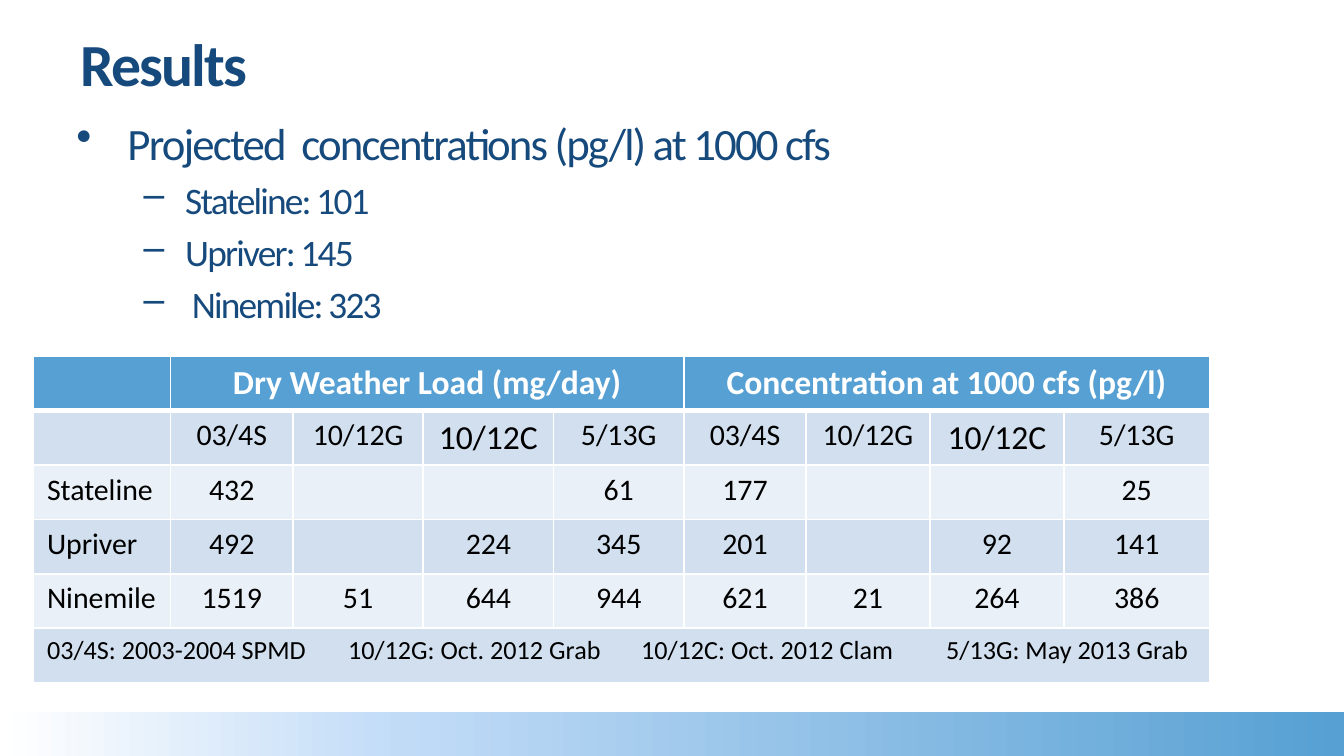
"""Build the Results slide with projected concentrations and a load table."""
from copy import deepcopy
from pptx import Presentation
from pptx.dml.color import RGBColor as Rgb
from pptx.enum.shapes import MSO_SHAPE as Shape
from pptx.enum.text import PP_ALIGN as Align
from pptx.oxml.ns import qn
from pptx.oxml.xmlchemy import OxmlElement as Elem
from pptx.util import Inches, Pt

FONT = "Calibri"
HUES = {
    "white": "FFFFFF", "pale": "C1DBF7", "blue": "56A0D3", "navy": "174A7C",
    "black": "000000", "even": "E9F0F7", "odd": "D1DFEF",
}
TITLE = "Results"
POINTS = [
    (0, "Projected  concentrations (pg/l) at 1000 cfs"),
    (1, "Stateline: 101"),
    (1, "Upriver: 145"),
    (1, " Ninemile: 323"),
]
LEVELS = [("•", 0.38, 0.38, 24), ("–", 0.81, 0.31, 20)]
GROUPS = ["Dry Weather Load (mg/day)", "Concentration at 1000 cfs (pg/l)"]
DATES = ["03/4S", "10/12G", "10/12C", "5/13G"]
SITES = [
    ["Stateline", "432", "", "", "61", "177", "", "", "25"],
    ["Upriver", "492", "", "224", "345", "201", "", "92", "141"],
    ["Ninemile", "1519", "51", "644", "944", "621", "21", "264", "386"],
]
KEYS = ["03/4S: 2003-2004 SPMD", "10/12G: Oct. 2012 Grab",
        "10/12C: Oct. 2012 Clam", "5/13G: May 2013 Grab"]
TABS = [2.24, 4.42, 6.69]
WIDTHS = [1.02, 0.91, 0.97, 0.97, 0.97, 0.91, 0.92, 1, 1.08]
WIDE = 10
HIGH = WIDE * 9 / 16
DEPTH = 2.43


def tint(name):
    return Rgb.from_string(HUES[name])


def style(para, size, hue, bold=False, space=None):
    for run in para.runs:
        font = run.font
        font.name, font.size, font.bold = FONT, Pt(size), bold
        font.color.rgb = tint(hue)
        if space is not None:
            run._r.get_or_add_rPr().set("spc", str(space * 100))


def add_bar(slide):
    bar = slide.shapes.add_shape(
        Shape.RECTANGLE, 0, Inches(5.3), Inches(WIDE), Inches(0.35))
    bar.shadow.inherit = False
    bar.line.fill.background()
    bar.fill.gradient()
    bar.fill.gradient_angle = 0
    stops = next(bar._element.iter(qn("a:gsLst")))
    stops.insert(1, deepcopy(stops[0]))
    marks = [(0, "white"), (0.3, "pale"), (1, "blue")]
    for stop, (place, hue) in zip(bar.fill.gradient_stops, marks):
        stop.position = place
        stop.color.rgb = tint(hue)


def add_text(slide, *place):
    box = slide.shapes.add_textbox(*map(Inches, place))
    box.text_frame.word_wrap = True
    return box.text_frame


def add_points(slide):
    frame = add_text(slide, 0.47, 0.81, 8.92, 1.75)
    for i, (level, text) in enumerate(POINTS):
        para = frame.add_paragraph() if i else frame.paragraphs[0]
        mark, left, hang, size = LEVELS[level]
        para.text, para.level = text, level
        if i:
            para.space_before = Pt(size * 0.2)
        props = para._p.get_or_add_pPr()
        props.set("marL", str(Inches(left)))
        props.set("indent", str(-Inches(hang)))
        bullet = Elem("a:buChar")
        bullet.set("char", mark)
        props.append(bullet)
        style(para, size, "navy", space=-1)
        end = Elem("a:endParaRPr")
        end.set("sz", str(size * 100))
        para._p.append(end)


def add_edges(cell, top, low):
    props = cell._tc.get_or_add_tcPr()
    for side, width in zip("LRTB", (1, 1, top, low)):
        line = Elem(f"a:ln{side}")
        line.set("w", str(Pt(width)))
        fill, color = Elem("a:solidFill"), Elem("a:srgbClr")
        color.set("val", HUES["white"])
        fill.append(color)
        line.append(fill)
        props.append(line)


def add_tabs(para):
    stops = Elem("a:tabLst")
    for place in TABS:
        stop = Elem("a:tab")
        stop.set("pos", str(Inches(place)))
        stop.set("algn", "l")
        stops.append(stop)
    para._p.get_or_add_pPr().append(stops)


def add_grid(slide):
    head = [""] + [text for name in GROUPS for text in (name, "", "", "")]
    foot = ["\t".join(KEYS)] + [""] * 8
    rows = [head, [""] + DATES * 2, *SITES, foot]
    last = len(rows) - 1
    grid = slide.shapes.add_table(
        len(rows), len(WIDTHS), Inches(0.25), Inches(2.65),
        Inches(sum(WIDTHS)), Inches(DEPTH)).table
    for col, width in zip(grid.columns, WIDTHS):
        col.width = Inches(width)
    for r, row in enumerate(rows):
        for c, text in enumerate(row):
            cell = grid.cell(r, c)
            add_edges(cell, 3 if r == 1 else 1, 3 if r == 0 else 1)
            cell.fill.solid()
            hue = ("odd" if r % 2 else "even") if r else "blue"
            cell.fill.fore_color.rgb = tint(hue)
            if not text:
                continue
            para = cell.text_frame.paragraphs[0]
            para.text = text
            if c:
                para.alignment = Align.CENTER
            if r == last:
                add_tabs(para)
            size = 14 if r == last else 18 if r == 0 or text == "10/12C" else 16
            style(para, size, "black" if r else "white", r == 0)
    for r, start, end in [(0, 1, 4), (0, 5, 8), (last, 0, 8)]:
        grid.cell(r, start).merge(grid.cell(r, end))


def main():
    deck = Presentation()
    deck.slide_width, deck.slide_height = Inches(WIDE), Inches(HIGH)
    slide = deck.slides.add_slide(deck.slide_layouts[6])
    add_bar(slide)
    para = add_text(slide, 0.5, 0.23, 8.5, 0.94).paragraphs[0]
    para.text, para.line_spacing = TITLE, 0.85
    style(para, 32, "navy", True, -1)
    add_grid(slide)
    add_points(slide)
    deck.save("out.pptx")


if __name__ == "__main__":
    main()
